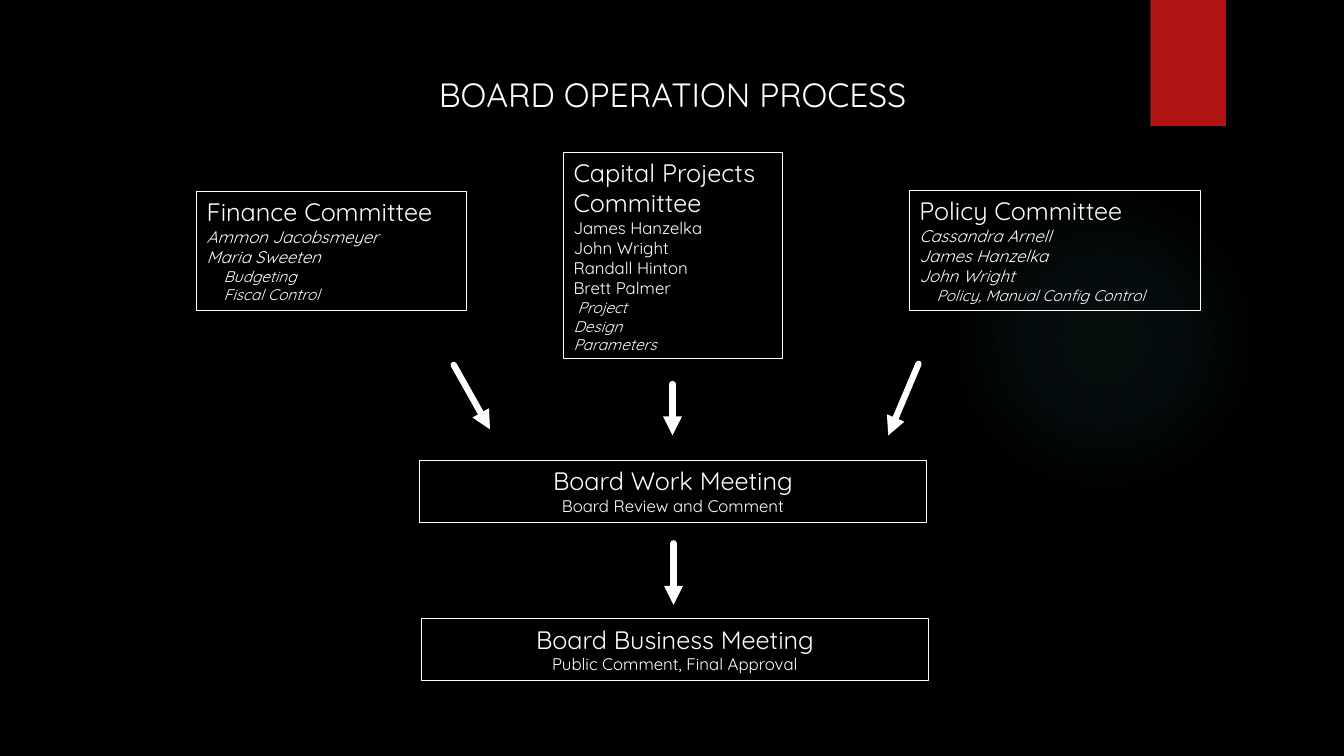
"""Build the board operation process slide."""
from dataclasses import dataclass

from lxml.etree import SubElement
from pptx import Presentation
from pptx.dml.color import RGBColor
from pptx.enum.shapes import MSO_CONNECTOR as Connector, MSO_SHAPE as Preset
from pptx.enum.text import MSO_ANCHOR as Anchor, PP_ALIGN as Align
from pptx.oxml import parse_xml
from pptx.oxml.ns import nsdecls, qn
from pptx.shapes.autoshape import Shape
from pptx.slide import Slide
from pptx.text.text import TextFrame
from pptx.util import Inches, Pt

WHITE, BLACK, RED, TEAL = "FFFFFF", "000000", "B01513", "50B9C1"
FORMATS = {
    "title": {"size": Pt(24), "italic": False},
    "heading": {"size": Pt(18), "italic": False},
    "member": {"size": Pt(12), "italic": False},
    "slanted": {"size": Pt(12), "italic": True},
    "duty": {"size": Pt(11), "italic": True},
}
GLOW_STOPS = ((0, 7), (36, 6), (69, 0))


@dataclass(frozen=True)
class Line:
    text: str
    style: str
    indent: float = 0


@dataclass(frozen=True)
class Stage:
    left: float
    top: float
    width: float
    height: float
    lines: tuple[Line, ...]
    align: Align = Align.LEFT


@dataclass(frozen=True)
class Arrow:
    start: tuple[float, float]
    end: tuple[float, float]


def meeting(left: float, top: float, name: str, purpose: str) -> Stage:
    lines = (Line(name, "heading"), Line(purpose, "member"))
    return Stage(left, top, 5.03, 0.61, lines, Align.CENTER)


TITLE = Stage(3.2, 0.68, 6.94, 0.5, (Line("BOARD OPERATION PROCESS", "title"),), Align.CENTER)
STAGES = (
    Stage(1.95, 1.9, 2.68, 1.18, (
        Line("Finance Committee", "heading"),
        Line("Ammon Jacobsmeyer", "slanted"),
        Line("Maria Sweeten", "slanted"),
        Line("Budgeting", "duty", 0.17),
        Line("Fiscal Control", "duty", 0.17),
    )),
    Stage(5.59, 1.51, 2.17, 2.05, (
        Line("Capital Projects Committee", "heading"),
        Line("James Hanzelka", "member"),
        Line("John Wright", "member"),
        Line("Randall Hinton", "member"),
        Line("Brett Palmer", "member"),
        Line("Project", "duty", 0.04),
        Line("Design", "duty"),
        Line("Parameters", "duty"),
    )),
    Stage(9.02, 1.89, 2.89, 1.19, (
        Line("Policy Committee", "heading"),
        Line("Cassandra Arnell", "slanted"),
        Line("James Hanzelka", "slanted"),
        Line("John Wright", "slanted"),
        Line("Policy, Manual Config Control", "duty", 0.17),
    )),
    meeting(4.16, 4.57, "Board Work Meeting", "Board Review and Comment"),
    meeting(4.18, 6.14, "Board Business Meeting", "Public Comment, Final Approval"),
)
ARROWS = (
    Arrow((4.5, 3.62), (4.86, 4.26)),
    Arrow((6.67, 3.81), (6.67, 4.32)),
    Arrow((9.11, 3.61), (8.81, 4.32)),
    Arrow((6.68, 5.39), (6.68, 6)),
)


def color(value: str) -> RGBColor:
    return RGBColor.from_string(value)


def add_plain_shape(slide: Slide, preset: Preset, left: float, top: float,
                    width: float, height: float) -> Shape:
    shape = slide.shapes.add_shape(
        preset, Inches(left), Inches(top), Inches(width), Inches(height))
    shape.shadow.inherit = False
    shape.fill.background()
    shape.line.fill.background()
    return shape


def add_glow(slide: Slide) -> None:
    glow = add_plain_shape(slide, Preset.OVAL, 9.41, 1.83, 3.08, 3.08)
    stops = "".join(
        f'<a:gs pos="{position * 1000}"><a:srgbClr val="{TEAL}">'
        f'<a:alpha val="{opacity * 1000}"/></a:srgbClr></a:gs>'
        for position, opacity in GLOW_STOPS)
    gradient = parse_xml(
        f'<a:gradFill {nsdecls("a")} rotWithShape="1"><a:gsLst>{stops}</a:gsLst>'
        '<a:path path="circle"><a:fillToRect l="50000" t="50000" r="50000" b="50000"/>'
        '</a:path></a:gradFill>')
    properties = glow._element.spPr
    properties.replace(properties.find(qn("a:noFill")), gradient)


def add_ribbon(slide: Slide) -> None:
    ribbon = add_plain_shape(slide, Preset.RECTANGLE, 11.41, 0, 0.75, 1.25)
    ribbon.fill.solid()
    ribbon.fill.fore_color.rgb = color(RED)


def write_lines(frame: TextFrame, stage: Stage) -> None:
    frame.word_wrap = True
    frame.vertical_anchor = Anchor.TOP
    for number, line in enumerate(stage.lines):
        paragraph = frame.paragraphs[0] if number == 0 else frame.add_paragraph()
        paragraph.alignment = stage.align
        if line.indent:
            paragraph._p.get_or_add_pPr().set("marL", str(Inches(line.indent)))
        run = paragraph.add_run()
        run.text = line.text
        run.font.name = "Quicksand"
        run.font.color.rgb = color(WHITE)
        for attribute, value in FORMATS[line.style].items():
            setattr(run.font, attribute, value)


def add_stage(slide: Slide, stage: Stage) -> None:
    box = add_plain_shape(
        slide, Preset.RECTANGLE, stage.left, stage.top, stage.width, stage.height)
    box.line.color.rgb = color(WHITE)
    box.line.width = Pt(0.75)
    write_lines(box.text_frame, stage)


def add_arrow(slide: Slide, arrow: Arrow) -> None:
    ends = [Inches(value) for value in (*arrow.start, *arrow.end)]
    connector = slide.shapes.add_connector(Connector.STRAIGHT, *ends)
    connector.line.color.rgb = color(WHITE)
    connector.line.width = Pt(4.5)
    outline = connector.line._get_or_add_ln()
    outline.set("cap", "rnd")
    SubElement(outline, qn("a:round"))
    SubElement(outline, qn("a:tailEnd"), type="triangle")
    SubElement(connector._element.spPr, qn("a:effectLst"))


def add_title(slide: Slide) -> None:
    title = slide.shapes.add_textbox(
        Inches(TITLE.left), Inches(TITLE.top), Inches(TITLE.width), Inches(TITLE.height))
    write_lines(title.text_frame, TITLE)


def main() -> None:
    deck = Presentation()
    deck.slide_width, deck.slide_height = Inches(13.33), Inches(7.5)
    slide = deck.slides.add_slide(deck.slide_layouts[6])
    slide.background.fill.solid()
    slide.background.fill.fore_color.rgb = color(BLACK)
    add_glow(slide)
    add_ribbon(slide)
    for stage in STAGES:
        add_stage(slide, stage)
    for arrow in ARROWS:
        add_arrow(slide, arrow)
    add_title(slide)
    deck.save("out.pptx")


if __name__ == "__main__":
    main()
